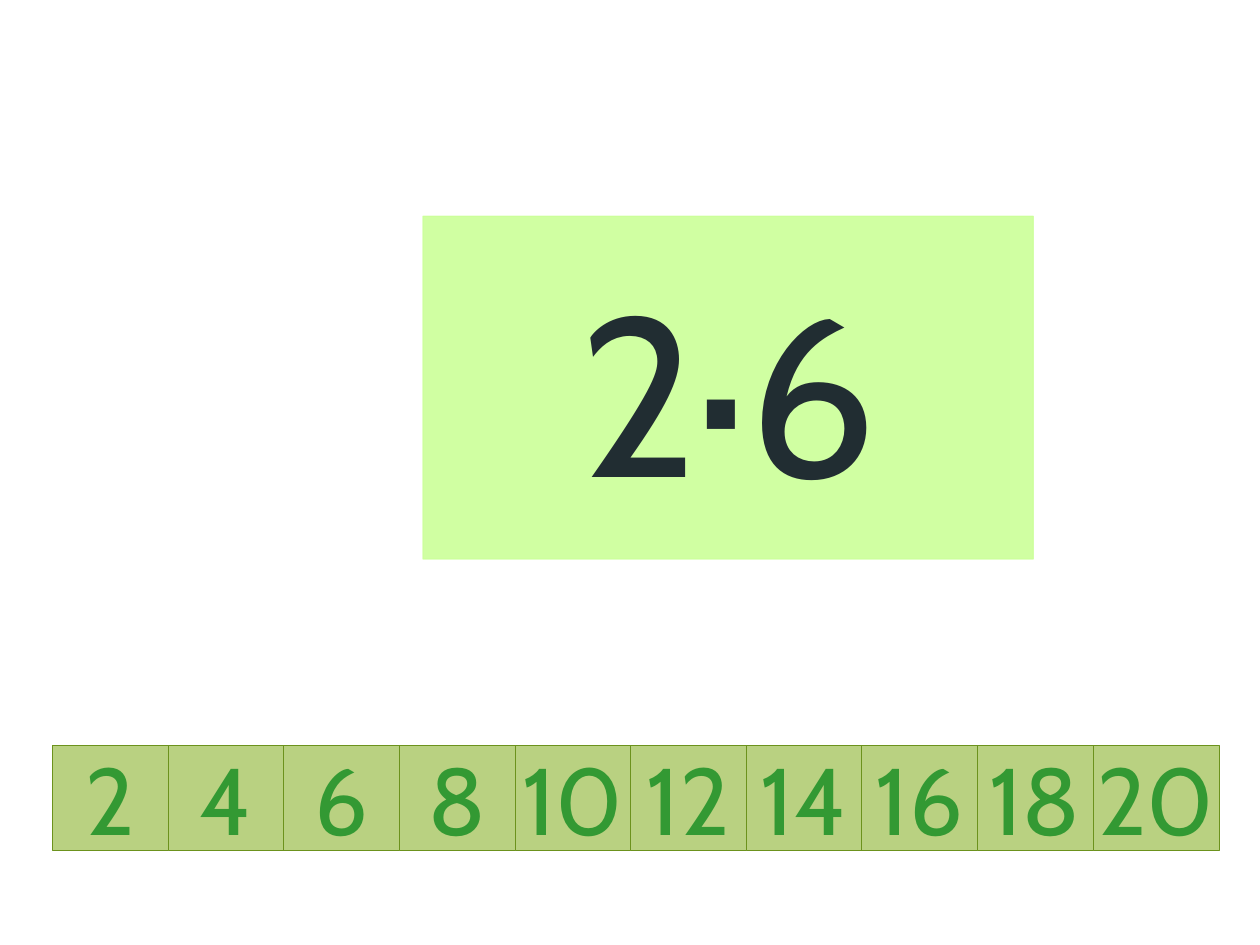
from dataclasses import dataclass

from lxml import etree
from pptx import Presentation
from pptx import util as u
from pptx.dml.color import RGBColor
from pptx.enum import shapes, text
from pptx.oxml.ns import qn

COLORS = {
    "button": "B9D181",
    "button_edge": "6C921D",
    "number": "339933",
    "card": "CCFF99",
    "task": "212D32",
}
FONT = "Cabin"
FACTOR = 2
BUTTON_COUNT = 10
ROW_LEFT, ROW_TOP = 1.06, 15.03
BUTTON_WIDTH, BUTTON_HEIGHT, LAST_WIDTH = 2.33, 2.12, 2.54


@dataclass(frozen=True)
class Panel:
    label: str
    left: float
    top: float
    width: float
    height: float
    kind: shapes.MSO_SHAPE
    fill: str
    edge: str
    edge_width: float
    size: int
    ink: str
    fill_alpha: int = 100
    edge_alpha: int = 100


def color(name: str) -> RGBColor:
    return RGBColor.from_string(COLORS[name])


def write_text(frame, label: str, *, size: int, ink: str) -> None:
    frame.word_wrap = False
    frame.vertical_anchor = text.MSO_ANCHOR.MIDDLE
    para = frame.paragraphs[0]
    para.alignment = text.PP_ALIGN.CENTER
    span = para.add_run()
    span.text = label
    span.font.name = FONT
    span.font.size = u.Pt(size)
    span.font.color.rgb = color(ink)


def set_alpha(properties, path: str, percent: int) -> None:
    if percent < 100:
        tint = properties.find(path + "/" + qn("a:srgbClr"))
        etree.SubElement(tint, qn("a:alpha")).set("val", str(percent * 1000))


def draw_panel(page, panel: Panel) -> None:
    frame = (panel.left, panel.top, panel.width, panel.height)
    box = page.shapes.add_shape(panel.kind, *map(u.Cm, frame))
    box.shadow.inherit = False
    box.fill.solid()
    box.fill.fore_color.rgb = color(panel.fill)
    box.line.color.rgb = color(panel.edge)
    box.line.width = u.Pt(panel.edge_width)
    properties = box.element.spPr
    solid = qn("a:solidFill")
    set_alpha(properties, solid, panel.fill_alpha)
    set_alpha(properties, qn("a:ln") + "/" + solid, panel.edge_alpha)
    write_text(box.text_frame, panel.label, size=panel.size, ink=panel.ink)


def number_button(index: int) -> Panel:
    is_last = index == BUTTON_COUNT - 1
    return Panel(
        label=str(FACTOR * (index + 1)),
        left=ROW_LEFT + index * BUTTON_WIDTH,
        top=ROW_TOP,
        width=LAST_WIDTH if is_last else BUTTON_WIDTH,
        height=BUTTON_HEIGHT,
        kind=shapes.MSO_SHAPE.ACTION_BUTTON_CUSTOM,
        fill="button",
        edge="button_edge",
        edge_width=0.25,
        size=54,
        ink="number",
    )


def main() -> None:
    deck = Presentation()
    deck.slide_width, deck.slide_height = u.Cm(25.4), u.Cm(19.05)
    page = deck.slides.add_slide(deck.slide_layouts[6])
    for index in range(BUTTON_COUNT):
        draw_panel(page, number_button(index))
    task_card = Panel(
        label="2·6",
        left=8.53,
        top=4.36,
        width=12.3,
        height=6.91,
        kind=shapes.MSO_SHAPE.RECTANGLE,
        fill="card",
        edge="card",
        edge_width=0.75,
        size=129,
        ink="task",
        fill_alpha=91,
        edge_alpha=81,
    )
    draw_panel(page, task_card)
    deck.save("out.pptx")


if __name__ == "__main__":
    main()
